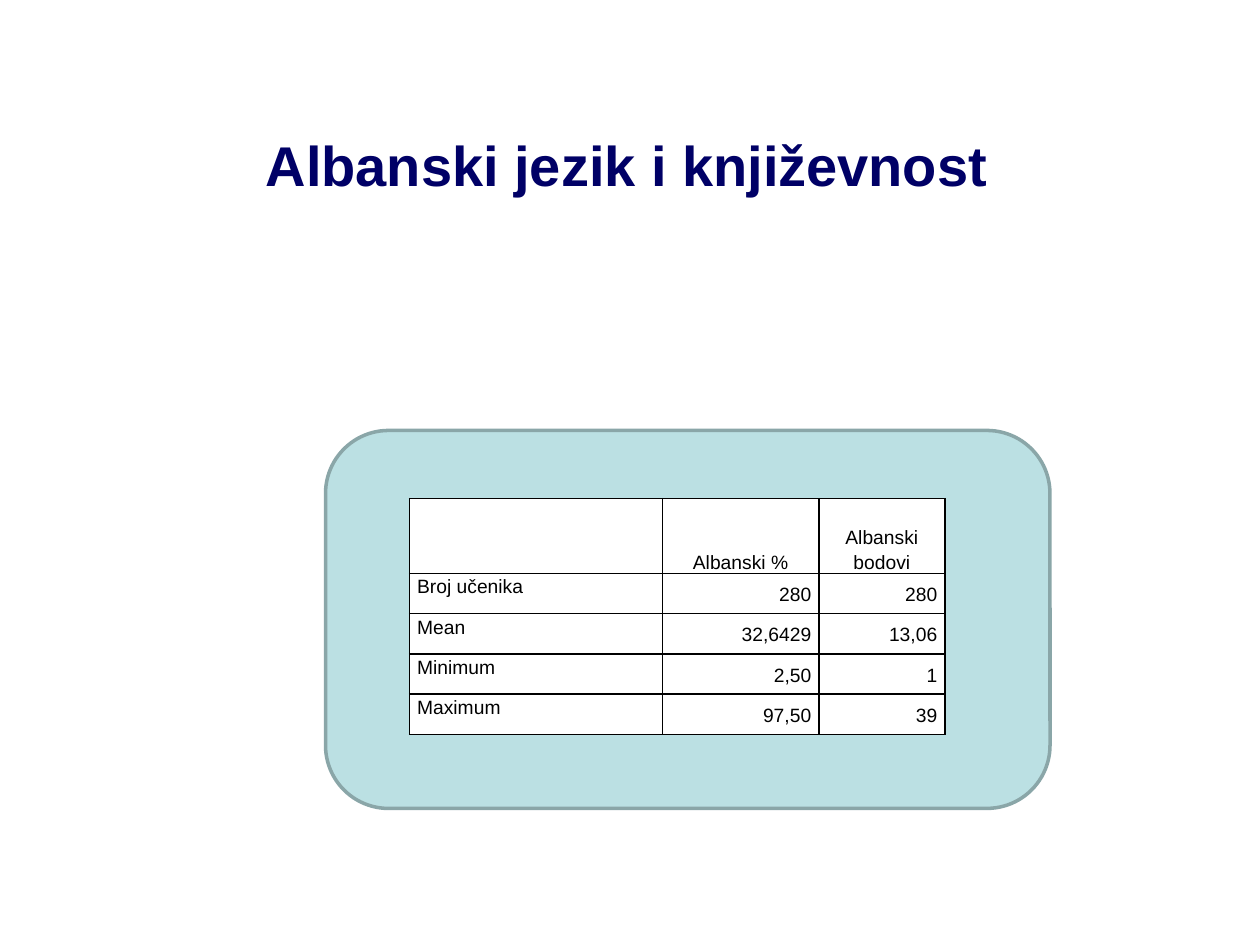
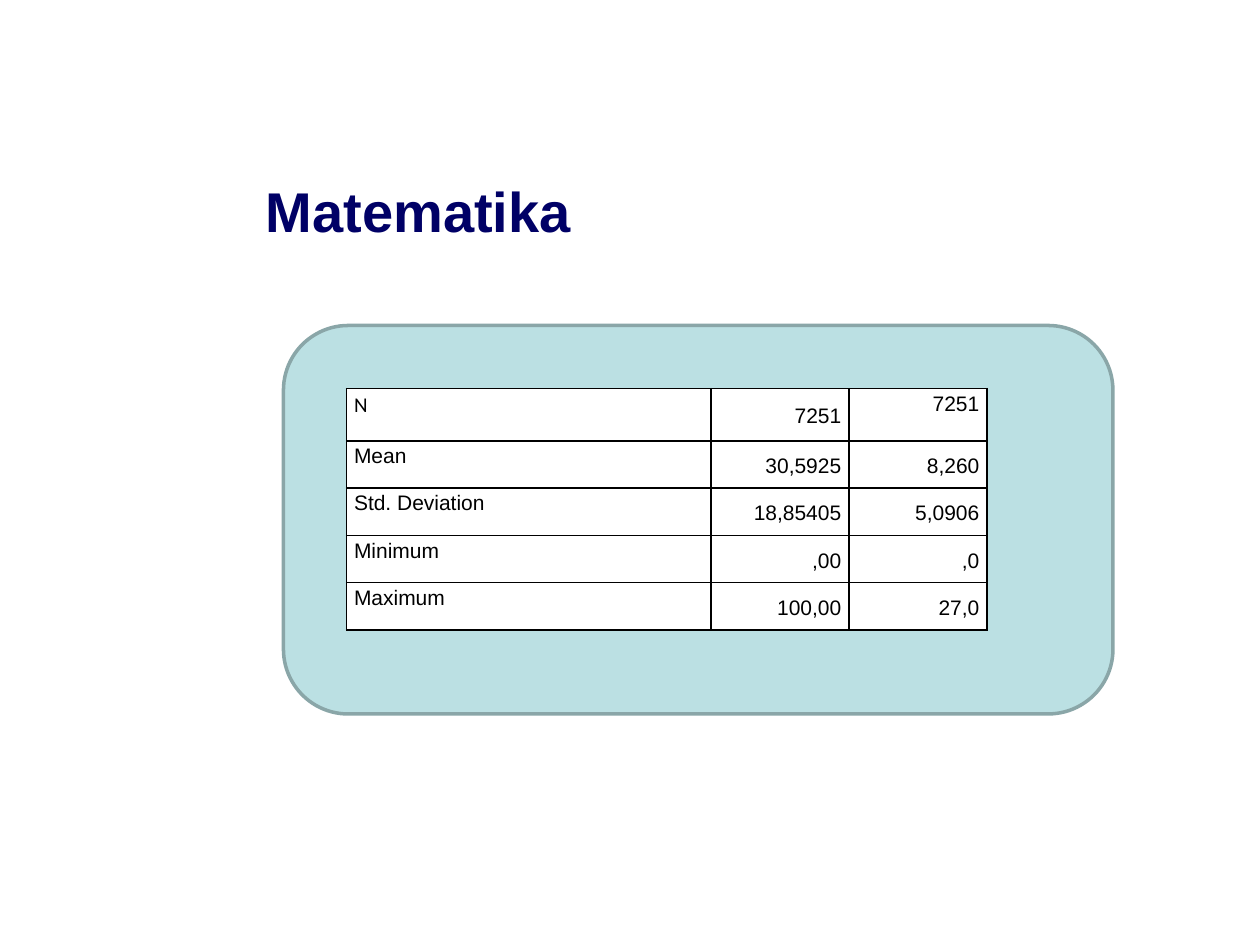
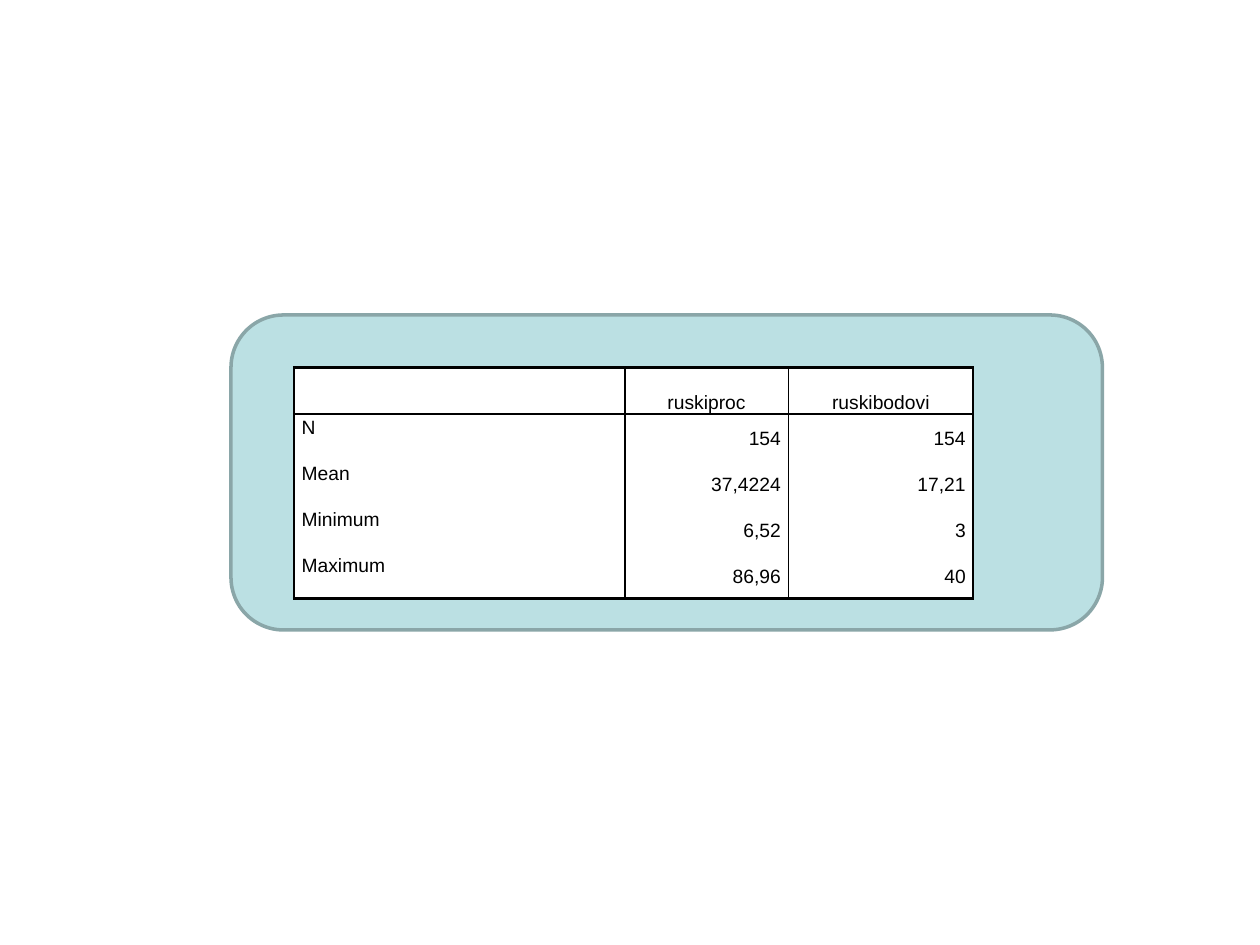
from lxml import etree
from pptx import Presentation
from pptx.dml.color import RGBColor
from pptx.enum.shapes import MSO_SHAPE
from pptx.enum.text import MSO_ANCHOR, MSO_AUTO_SIZE, PP_ALIGN
from pptx.oxml.ns import qn
from pptx.util import Inches, Pt

ROUNDED = MSO_SHAPE.ROUNDED_RECTANGLE
TOP, MIDDLE, BOTTOM = MSO_ANCHOR.TOP, MSO_ANCHOR.MIDDLE, MSO_ANCHOR.BOTTOM
LEFT, CENTER, RIGHT = PP_ALIGN.LEFT, PP_ALIGN.CENTER, PP_ALIGN.RIGHT

COLORS = {
    "title": "000066",
    "panel": "BBE0E3",
    "panel_line": "8AA6A8",
    "cell": "FFFFFF",
    "ink": "000000",
}
SLIDE_WIDTH, SLIDE_HEIGHT = Inches(10), Inches(7.5)
GRID_COLUMNS = 120
TITLE_BOX = (24.1, 14.8, 89.9, 10.4)
TITLE_LAYOUT, BLANK_LAYOUT = 5, 6
LABEL_SPAN = 2  # the row label covers two table columns


# Shared helpers
def grid(units):
    return round(SLIDE_WIDTH * units / GRID_COLUMNS)


def color(key):
    return RGBColor.from_string(COLORS[key])


def write(frame, text, size=11, ink="ink", bold=False, font="Arial",
          align=LEFT, spacing=None, after=None):
    frame.word_wrap = True
    frame.text = text
    paragraph = frame.paragraphs[0]
    paragraph.alignment = align
    paragraph.line_spacing = spacing
    if after is not None:
        paragraph.space_after = Pt(after)
    for run in paragraph.runs or [paragraph.add_run()]:
        run.font.size, run.font.bold, run.font.name = Pt(size), bold, font
        run.font.color.rgb = color(ink)


def add_titled_slide(deck, text):
    slide = deck.slides.add_slide(deck.slide_layouts[TITLE_LAYOUT])
    title = slide.shapes.title
    title.left, title.top, title.width, title.height = map(grid, TITLE_BOX)
    title.text_frame.auto_size = MSO_AUTO_SIZE.NONE
    title.text_frame.vertical_anchor = MIDDLE
    write(title.text_frame, text, size=32, ink="title", bold=True)
    return slide


def add_panel(slide, *box):
    panel = slide.shapes.add_shape(ROUNDED, *map(grid, box))
    panel.shadow.inherit = False
    panel.fill.solid()
    panel.fill.fore_color.rgb = color("panel")
    panel.line.color.rgb = color("panel_line")
    panel.line.width = Pt(2)


# Statistics table
def set_borders(cell, **widths):
    properties = cell._tc.get_or_add_tcPr()
    for side, width in widths.items():
        line = etree.SubElement(properties, qn(f"a:ln{side}"), w=str(Pt(width)))
        if width:
            fill = etree.SubElement(line, qn("a:solidFill"))
            etree.SubElement(fill, qn("a:srgbClr"), val=COLORS["ink"])
        else:
            etree.SubElement(line, qn("a:noFill"))


def add_statistics(slide, left, top, widths, heights, rows, open_row,
                   size=11, header=True, verticals=(1, 0, 1, 1, 1),
                   horizontals=(1,) * 6):
    """Rows hold a label and two values; open_row keeps its label unmerged.

    verticals and horizontals are the line widths at the column and row edges.
    """
    table = slide.shapes.add_table(
        len(heights), len(widths), grid(left), grid(top),
        grid(sum(widths)), grid(sum(heights))).table
    table.first_row = table.horz_banding = False
    for column, width in zip(table.columns, widths):
        column.width = grid(width)
    for row, height in zip(table.rows, heights):
        row.height = grid(height)

    for r, (label, *values) in enumerate(rows):
        if r != open_row:
            table.cell(r, 0).merge(table.cell(r, LABEL_SPAN - 1))
        for c, text in enumerate([label, "", *values]):
            cell = table.cell(r, c)
            is_value = c >= LABEL_SPAN
            is_header = header and r == 0
            cell.margin_left = cell.margin_right = Inches(0.06)
            cell.margin_top = cell.margin_bottom = 0
            cell.vertical_anchor = (
                TOP if not is_value else BOTTOM if is_header else MIDDLE)
            align = LEFT if not is_value else CENTER if is_header else RIGHT
            write(cell.text_frame, text, size=size, align=align, spacing=1.15)
            right_edge = LABEL_SPAN if cell.is_merge_origin else c + 1
            set_borders(cell, L=verticals[c], R=verticals[right_edge],
                        T=horizontals[r], B=horizontals[r + 1])
            cell.fill.solid()
            cell.fill.fore_color.rgb = color("cell")
    return table


# Slides
def build_albanian(deck):
    slide = add_titled_slide(deck, "Albanski jezik i književnost\v")
    add_panel(slide, 31, 41, 69, 36)
    add_statistics(
        slide, 39, 47.5, (17.9, 6.2, 14.9, 12), (7.1,) + (3.84,) * 4,
        [("", "Albanski %", "Albanski bodovi"),
         ("Broj učenika", "280", "280"),
         ("Mean", "32,6429", "13,06"),
         ("Minimum", "2,50", "1"),
         ("Maximum", "97,50", "39")],
        open_row=1)


def build_mathematics(deck):
    slide = add_titled_slide(deck, "Matematika")
    add_panel(slide, 27, 31, 79, 37)
    table = add_statistics(
        slide, 33, 37, (31.8, 2.9, 13.15, 13.15), (5,) + (4.5,) * 4,
        [("N", "7251", "7251"),
         ("Mean", "30,5925", "8,260"),
         ("Std. Deviation", "18,85405", "5,0906"),
         ("Minimum", ",00", ",0"),
         ("Maximum", "100,00", "27,0")],
        open_row=0, size=12, header=False)
    # The count row differs in label font and in the last value's anchor
    write(table.cell(0, 0).text_frame, "N", size=12, font="Calibri",
          spacing=1.15, after=10)
    table.cell(0, 3).vertical_anchor = TOP


def build_russian(deck):
    slide = deck.slides.add_slide(deck.slide_layouts[BLANK_LAYOUT])
    add_panel(slide, 22, 30, 83, 30)
    add_statistics(
        slide, 28, 35, (15.75, 15.75, 15.6, 17.6), (4.4,) * 5,
        [("", "ruskiproc", "ruskibodovi"),
         ("N", "154", "154"),
         ("Mean", "37,4224", "17,21"),
         ("Minimum", "6,52", "3"),
         ("Maximum", "86,96", "40")],
        open_row=1, verticals=(1.5, 0, 1.5, 1, 1.5),
        horizontals=(1.5, 1.5, 0, 0, 0, 1.5))


def main():
    deck = Presentation()
    deck.slide_width, deck.slide_height = SLIDE_WIDTH, SLIDE_HEIGHT
    build_albanian(deck)
    build_mathematics(deck)
    build_russian(deck)
    deck.save("out.pptx")


if __name__ == "__main__":
    main()
